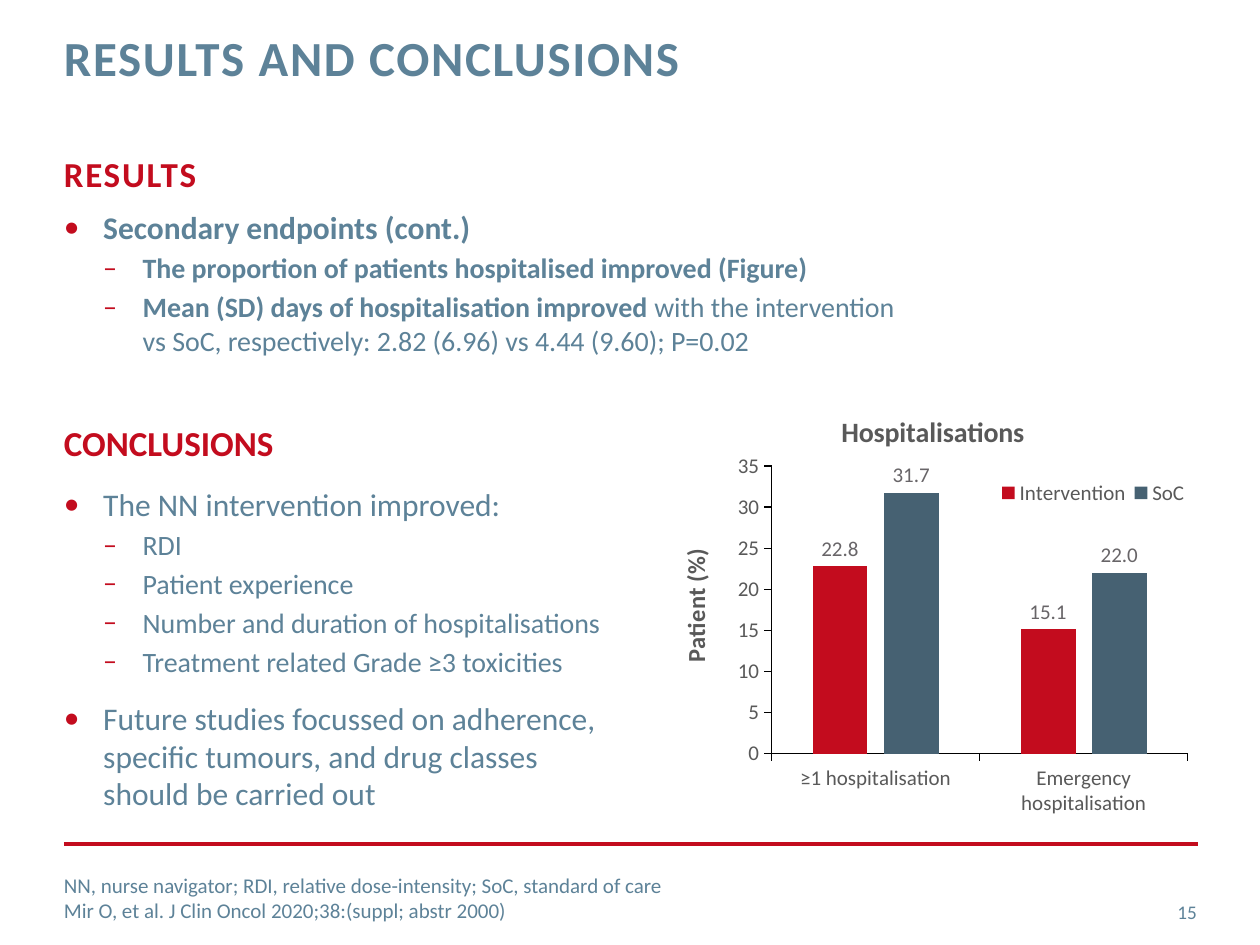
"""Build the results and conclusions slide with its hospitalisation chart."""
from lxml.etree import SubElement
from pptx import Presentation
from pptx.chart.data import CategoryChartData
from pptx.dml.color import RGBColor
from pptx.enum.chart import XL_CHART_TYPE as ChartType, XL_LABEL_POSITION as LabelPosition
from pptx.enum.chart import XL_LEGEND_POSITION as LegendPosition, XL_TICK_MARK as TickMark
from pptx.enum.shapes import MSO_CONNECTOR as Connector
from pptx.enum.text import MSO_ANCHOR as Anchor, MSO_AUTO_SIZE as AutoSize, PP_ALIGN as Align
from pptx.oxml import parse_xml
from pptx.oxml.ns import nsdecls, qn
from pptx.util import Pt

RED = RGBColor(0xC3, 0x0C, 0x1E)
BLUE = RGBColor(0x5D, 0x82, 0x98)
SLATE = RGBColor(0x46, 0x61, 0x72)
GREY = RGBColor(0x59, 0x59, 0x59)
LABEL_GREY = RGBColor(0x68, 0x65, 0x68)
BLACK = RGBColor(0, 0, 0)
FONT = "Calibri"
LEFT = 36.5
INDENT = 22.5

STYLES = {
    "title": {"size": 28, "color": BLUE, "bold": True, "spacing": 1, "line": Pt(30)},
    "spaced heading": {"size": 20, "color": RED, "bold": True, "spacing": 1},
    "heading": {"size": 20, "color": RED, "bold": True},
    "bullet": {"size": 18, "color": BLUE, "before": 12, "mark": "•", "level": 0},
    "dash": {"size": 16, "color": BLUE, "before": 3, "mark": "–", "level": 1},
    "note": {"size": 12, "color": BLUE},
    "page": {"size": 11, "color": BLUE, "align": Align.RIGHT},
}


def set_font(font, size, color, bold=False):
    for name, value in {"name": FONT, "size": Pt(size), "bold": bold}.items():
        setattr(font, name, value)
    font.color.rgb = color


def write(shape, box, paragraphs, anchor=Anchor.TOP):
    shape.left, shape.top, shape.width, shape.height = map(Pt, box)
    frame = shape.text_frame
    frame_format = {
        "margin_left": 0, "margin_top": 0, "margin_right": 0, "margin_bottom": 0,
        "word_wrap": True, "auto_size": AutoSize.NONE, "vertical_anchor": anchor,
    }
    for name, value in frame_format.items():
        setattr(frame, name, value)
    for position, (style_name, *pieces) in enumerate(paragraphs):
        style = STYLES[style_name]
        paragraph = frame.add_paragraph() if position else frame.paragraphs[0]
        if "mark" in style:
            paragraph.level = style["level"]
            properties = paragraph._p.get_or_add_pPr()
            properties.set("marL", str(Pt(INDENT * (style["level"] + 1))))
            properties.set("indent", str(-Pt(INDENT)))
            bullet_color = SubElement(properties, qn("a:buClr"))
            SubElement(bullet_color, qn("a:srgbClr"), val=str(RED))
            SubElement(properties, qn("a:buFont"), typeface=FONT)
            SubElement(properties, qn("a:buChar"), char=style["mark"])
        paragraph.alignment = style.get("align", Align.LEFT)
        paragraph.space_before = Pt(style.get("before", 0) if position else 0)
        if "line" in style:
            paragraph.line_spacing = style["line"]
        for text, bold in pieces:
            for row, line in enumerate(text.split("\n")):
                if row:
                    paragraph.add_line_break()
                run = paragraph.add_run()
                run.text = line
                set_font(run.font, style["size"], style["color"], bold)
                if "spacing" in style:
                    run._r.get_or_add_rPr().set("spc", str(style["spacing"] * 100))


presentation = Presentation()
presentation.slide_width, presentation.slide_height = Pt(720), Pt(540)
slide = presentation.slides.add_slide(presentation.slide_layouts[5])

footer_rule = slide.shapes.add_connector(
    Connector.STRAIGHT, Pt(LEFT), Pt(482.4), Pt(684.5), Pt(482.4))
footer_rule.line.color.rgb = RED
footer_rule.line.width = Pt(2)
SubElement(footer_rule._element.spPr, qn("a:effectLst"))

write(slide.shapes.title, (LEFT, 19.5, 516, 63), [("title", ("RESULTS AND CONCLUSIONS", True))])

text_blocks = [
    ((LEFT, 87, 648, 28), Anchor.TOP, [("spaced heading", ("RESULTS", True))]),
    ((LEFT, 118.8, 648, 97), Anchor.TOP, [
        ("bullet", ("Secondary endpoints (cont.)", True)),
        ("dash", ("The proportion of patients hospitalised improved (Figure)", True)),
        ("dash", ("Mean (SD) days of hospitalisation improved ", True),
         ("with the intervention\nvs SoC, respectively: 2.82 (6.96) vs 4.44 (9.60); P=0.02", False)),
    ]),
    ((LEFT, 241, 335, 235), Anchor.TOP, [
        ("heading", ("CONCLUSIONS", True)),
        ("bullet", ("The NN intervention improved:", False)),
        ("dash", ("RDI", False)),
        ("dash", ("Patient experience", False)),
        ("dash", ("Number and duration of hospitalisations", False)),
        ("dash", ("Treatment related Grade ≥3 toxicities", False)),
        ("bullet", ("Future studies focussed on adherence,\nspecific tumours, and drug classes\n"
                    "should be carried out", False)),
    ]),
    ((LEFT, 498.5, 480, 29), Anchor.MIDDLE, [
        ("note", ("NN, nurse navigator; RDI, relative dose-intensity; SoC, standard of care", False)),
        ("note", ("Mir O, et al. J Clin Oncol 2020;38:(suppl; abstr 2000)", False)),
    ]),
    ((638, 506.5, 46, 29), Anchor.MIDDLE, [("page", ("15", False))]),
]
for box, anchor, paragraphs in text_blocks:
    write(slide.shapes.add_textbox(0, 0, 0, 0), box, paragraphs, anchor)

hospitalisations = CategoryChartData(number_format="0.0")
hospitalisations.categories = ["≥1 hospitalisation", "Emergency hospitalisation"]
hospitalisations.add_series("Intervention", (22.8, 15.1))
hospitalisations.add_series("SoC", (31.7, 22))
chart = slide.shapes.add_chart(
    ChartType.COLUMN_CLUSTERED, Pt(376), Pt(219), Pt(309), Pt(278.5), hospitalisations).chart
set_font(chart.font, 12, GREY)

plot = chart.plots[0]
plot.gap_width, plot.overlap, plot.vary_by_categories = 150, -30, False
for series, color in zip(plot.series, (RED, SLATE)):
    series.format.fill.solid()
    series.format.fill.fore_color.rgb = color
    labels = series.data_labels
    label_format = {
        "show_value": True, "position": LabelPosition.OUTSIDE_END,
        "number_format": "0.0", "number_format_is_linked": False,
    }
    for name, value in label_format.items():
        setattr(labels, name, value)
    set_font(labels.font, 12, LABEL_GREY)

value_axis, category_axis = chart.value_axis, chart.category_axis
for axis in (value_axis, category_axis):
    axis.has_major_gridlines = False
    axis.major_tick_mark = TickMark.OUTSIDE
    axis.format.line.color.rgb = BLACK
    axis.format.line.width = Pt(0.75)
    set_font(axis.tick_labels.font, 12, GREY)
scale = {"minimum_scale": 0, "maximum_scale": 35, "major_unit": 5}
for name, value in scale.items():
    setattr(value_axis, name, value)
value_axis.tick_labels.number_format = "0"
value_axis.tick_labels.number_format_is_linked = False

chart.has_title = True
for heading, text, size in ((chart.chart_title, "Hospitalisations", 16),
                            (value_axis.axis_title, "Patient (%)", 14)):
    heading.text_frame.text = text
    set_font(heading.text_frame.paragraphs[0].runs[0].font, size, GREY, True)
rotation = value_axis.axis_title.text_frame._txBody.bodyPr
rotation.set("rot", "-5400000")
rotation.set("vert", "horz")

chart.has_legend = True
chart.legend.position = LegendPosition.BOTTOM
chart.legend.include_in_layout = False
set_font(chart.legend.font, 12, GREY)

placements = [
    ("c:chart/c:plotArea", 0, {"x": 0.21, "y": 0.17, "w": 0.77, "h": 0.59}),
    ("c:chart/c:title", 1, {"x": 0.33, "y": 0.05}),
    ("c:chart/c:plotArea/c:valAx/c:title", 1, {"x": 0.03, "y": 0.33}),
    ("c:chart/c:legend", 1, {"x": 0.62, "y": 0.19, "w": 0.37, "h": 0.07}),
]
for target, index, sizes in placements:
    part = chart._chartSpace.xpath(target)[0]
    for old_layout in part.findall(qn("c:layout")):
        part.remove(old_layout)
    inner = '<c:layoutTarget val="inner"/>' if target.endswith("plotArea") else ""
    modes = "".join(f'<c:{axis}Mode val="edge"/>' for axis in "xy")
    values = "".join(f'<c:{key} val="{value}"/>' for key, value in sizes.items())
    part.insert(index, parse_xml(
        f'<c:layout {nsdecls("c")}><c:manualLayout>{inner}{modes}{values}'
        "</c:manualLayout></c:layout>"))

presentation.save("out.pptx")
